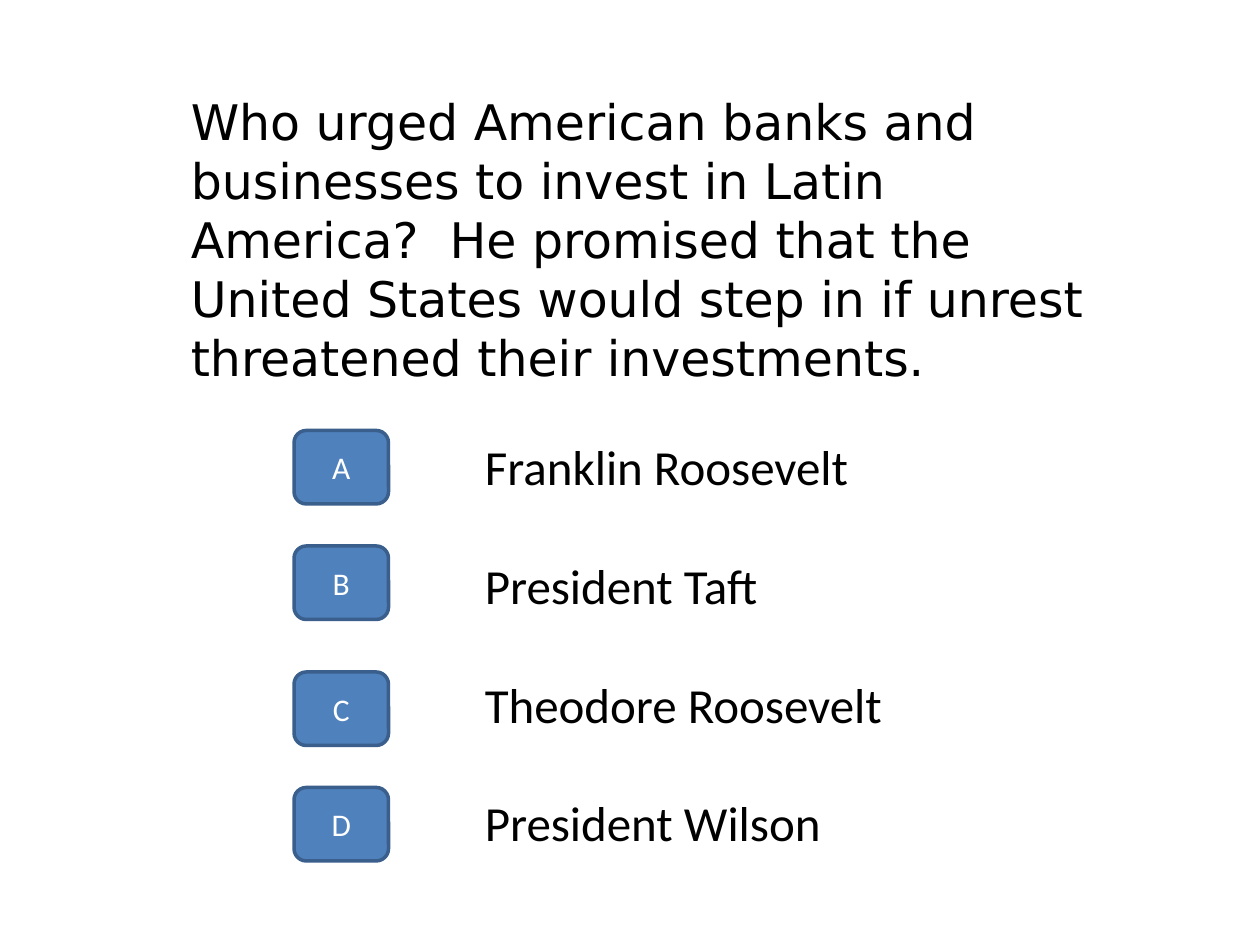
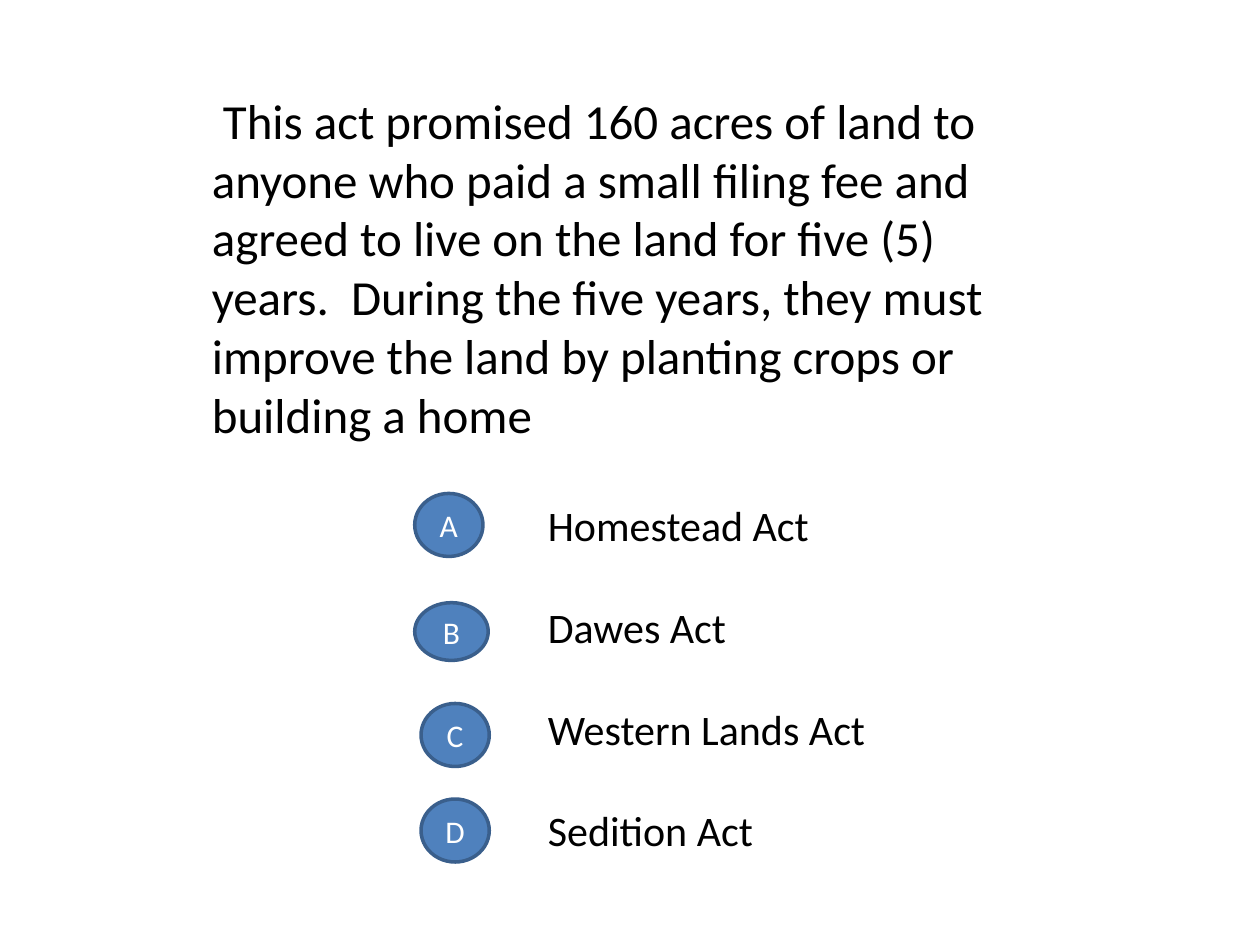
from pptx import Presentation
from pptx.dml.color import RGBColor
from pptx.enum.shapes import MSO_SHAPE
from pptx.enum.text import MSO_ANCHOR, MSO_AUTO_SIZE, PP_ALIGN
from pptx.util import Inches, Pt

BLACK = RGBColor(0x00, 0x00, 0x00)
WHITE = RGBColor(0xFF, 0xFF, 0xFF)
BLUE = RGBColor(0x4F, 0x81, 0xBD)
NAVY = RGBColor(0x3A, 0x5F, 0x8C)
ROUND, OVAL = MSO_SHAPE.ROUNDED_RECTANGLE, MSO_SHAPE.OVAL
TOP, MIDDLE = MSO_ANCHOR.TOP, MSO_ANCHOR.MIDDLE
GROW = MSO_AUTO_SIZE.SHAPE_TO_FIT_TEXT
CENTER = PP_ALIGN.CENTER
SANS, WIDE = "Calibri", "DejaVu Sans"
WIDTH, HEIGHT = Inches(10), Inches(7.5)
COLS = 120
CELL = WIDTH / COLS
LEADING = 1.22


def place(box):
    return [round(n * CELL) for n in box]


def style(para, size, color, font=SANS):
    para.font.size = Pt(size)
    para.font.name = font
    para.font.color.rgb = color


def add_text(slide, box, lines, size, font=SANS, anchor=TOP):
    frame = slide.shapes.add_textbox(*place(box)).text_frame
    frame.word_wrap = True
    frame.auto_size = GROW
    frame.vertical_anchor = anchor
    for i, line in enumerate(lines):
        para = frame.add_paragraph() if i else frame.paragraphs[0]
        para.text = line
        style(para, size, BLACK, font)
        if i:
            para.space_before = Pt(round(size * LEADING, 1))


def add_badge(slide, kind, box, letter):
    badge = slide.shapes.add_shape(kind, *place(box))
    badge.shadow.inherit = False
    badge.fill.solid()
    badge.fill.fore_color.rgb = BLUE
    badge.line.color.rgb = NAVY
    badge.line.width = Pt(2)
    frame = badge.text_frame
    frame.vertical_anchor = MIDDLE
    para = frame.paragraphs[0]
    para.text = letter
    para.alignment = CENTER
    style(para, 18, WHITE)


def add_badges(slide, kind, boxes):
    for letter, box in zip("ABCD", boxes):
        add_badge(slide, kind, box, letter)


def add_slide(deck):
    return deck.slides.add_slide(deck.slide_layouts[6])


def add_leader(deck):
    slide = add_slide(deck)
    add_text(slide, (17, 8, 91, 29.5), [
        "Who urged American banks and businesses to invest in Latin America?  "
        "He promised that the United States would step in if unrest "
        "threatened their investments."], 28, WIDE, MIDDLE)
    add_text(slide, (45, 41, 54, 40.8), [
        "Franklin Roosevelt", "President Taft",
        "Theodore Roosevelt", "President Wilson"], 28)
    add_badges(slide, ROUND, [(28, top, 9, 7) for top in (41, 52, 64, 75)])


def add_land(deck):
    slide = add_slide(deck)
    add_text(slide, (19, 8, 79.5, 35.2), [
        " This act promised 160 acres of land to anyone who paid a small "
        "filing fee and agreed to live on the land for five (5) years.  "
        "During the five years, they must improve the land by planting "
        "crops or building a home"], 28)
    add_text(slide, (51, 47, 60, 35.2), [
        "Homestead Act", "Dawes Act", "Western Lands Act", "Sedition Act"], 24)
    add_badges(slide, OVAL, [
        (39.5, 47, 6.5, 6), (39.5, 57.4, 7, 5.5),
        (40.1, 67, 6.5, 6), (40.1, 76.1, 6.5, 6)])


def main():
    deck = Presentation()
    deck.slide_width, deck.slide_height = WIDTH, HEIGHT
    add_leader(deck)
    add_land(deck)
    deck.save("out.pptx")


if __name__ == "__main__":
    main()
